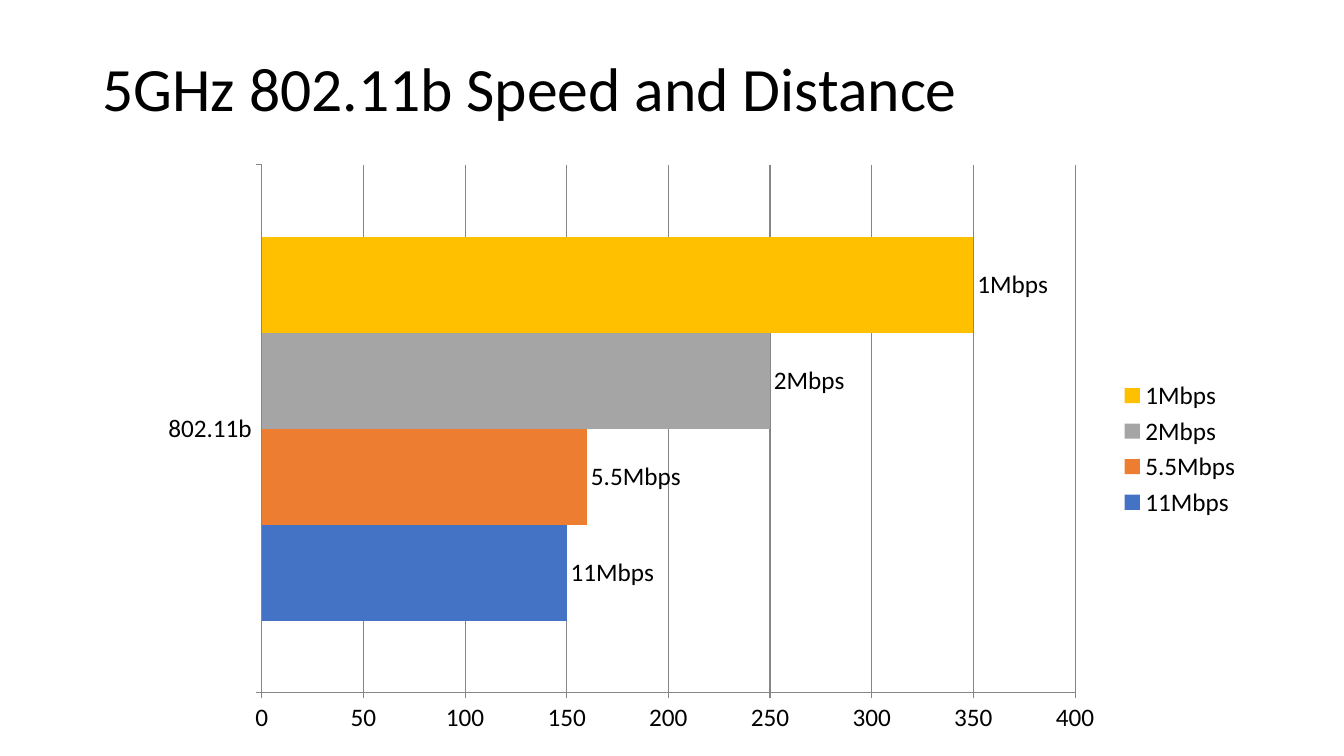
from pptx import Presentation
from pptx.chart.data import CategoryChartData
from pptx.dml.color import RGBColor
from pptx.enum.chart import XL_CHART_TYPE, XL_LABEL_POSITION, XL_LEGEND_POSITION, XL_TICK_MARK
from pptx.enum.text import MSO_ANCHOR, PP_ALIGN
from pptx.util import Pt

BLACK = RGBColor(0x00, 0x00, 0x00)
GRAY = RGBColor(0x86, 0x86, 0x86)
BLUE = RGBColor(0x44, 0x72, 0xC4)
ORANGE = RGBColor(0xED, 0x7D, 0x31)
SILVER = RGBColor(0xA5, 0xA5, 0xA5)
GOLD = RGBColor(0xFF, 0xC0, 0x00)
FONT = "Calibri"

SPEEDS = [
    ("11Mbps", 150, BLUE),
    ("5.5Mbps", 160, ORANGE),
    ("2Mbps", 250, SILVER),
    ("1Mbps", 350, GOLD),
]


def add_text(tf, text, size, color, font=FONT, spacing=0.9):
    p = tf.paragraphs[0]
    p.alignment = PP_ALIGN.LEFT
    p.line_spacing = spacing
    r = p.add_run()
    r.text = text
    r.font.size = Pt(size)
    r.font.name = font
    r.font.color.rgb = color


prs = Presentation()
prs.slide_width = Pt(960)
prs.slide_height = Pt(540)
s = prs.slides.add_slide(prs.slide_layouts[5])

title = s.shapes.title
title.left, title.top, title.width, title.height = Pt(66), Pt(28.8), Pt(828), Pt(73.4)
tf = title.text_frame
tf.vertical_anchor = MSO_ANCHOR.MIDDLE
tf.word_wrap = True
add_text(tf, "5GHz 802.11b Speed and Distance", size=44, color=BLACK)

data = CategoryChartData()
data.categories = ["802.11b"]
for name, distance, color in SPEEDS:
    data.add_series(name, [distance])

chart = s.shapes.add_chart(
    XL_CHART_TYPE.BAR_CLUSTERED, Pt(104.4), Pt(109.4), Pt(789.8), Pt(422.6), data
).chart
chart.has_title = False
chart.font.size = Pt(18)
chart.font.name = FONT
chart.font.color.rgb = BLACK
chart.has_legend = True
chart.legend.position = XL_LEGEND_POSITION.RIGHT
chart.legend.include_in_layout = False

plot = chart.plots[0]
plot.gap_width = 150
plot.overlap = 0
plot.vary_by_categories = False
for series, (name, distance, color) in zip(plot.series, SPEEDS):
    series.format.fill.solid()
    series.format.fill.fore_color.rgb = color
    labels = series.data_labels
    labels.show_value = False
    labels.show_series_name = True
    labels.position = XL_LABEL_POSITION.OUTSIDE_END

for axis in (chart.category_axis, chart.value_axis):
    axis.major_tick_mark = XL_TICK_MARK.OUTSIDE
    axis.minor_tick_mark = XL_TICK_MARK.NONE
    axis.format.line.color.rgb = GRAY
    axis.format.line.width = Pt(0.75)

chart.category_axis.has_major_gridlines = False
chart.value_axis.has_major_gridlines = True
grid = chart.value_axis.major_gridlines.format.line
grid.color.rgb = GRAY
grid.width = Pt(0.75)

prs.save("out.pptx")
